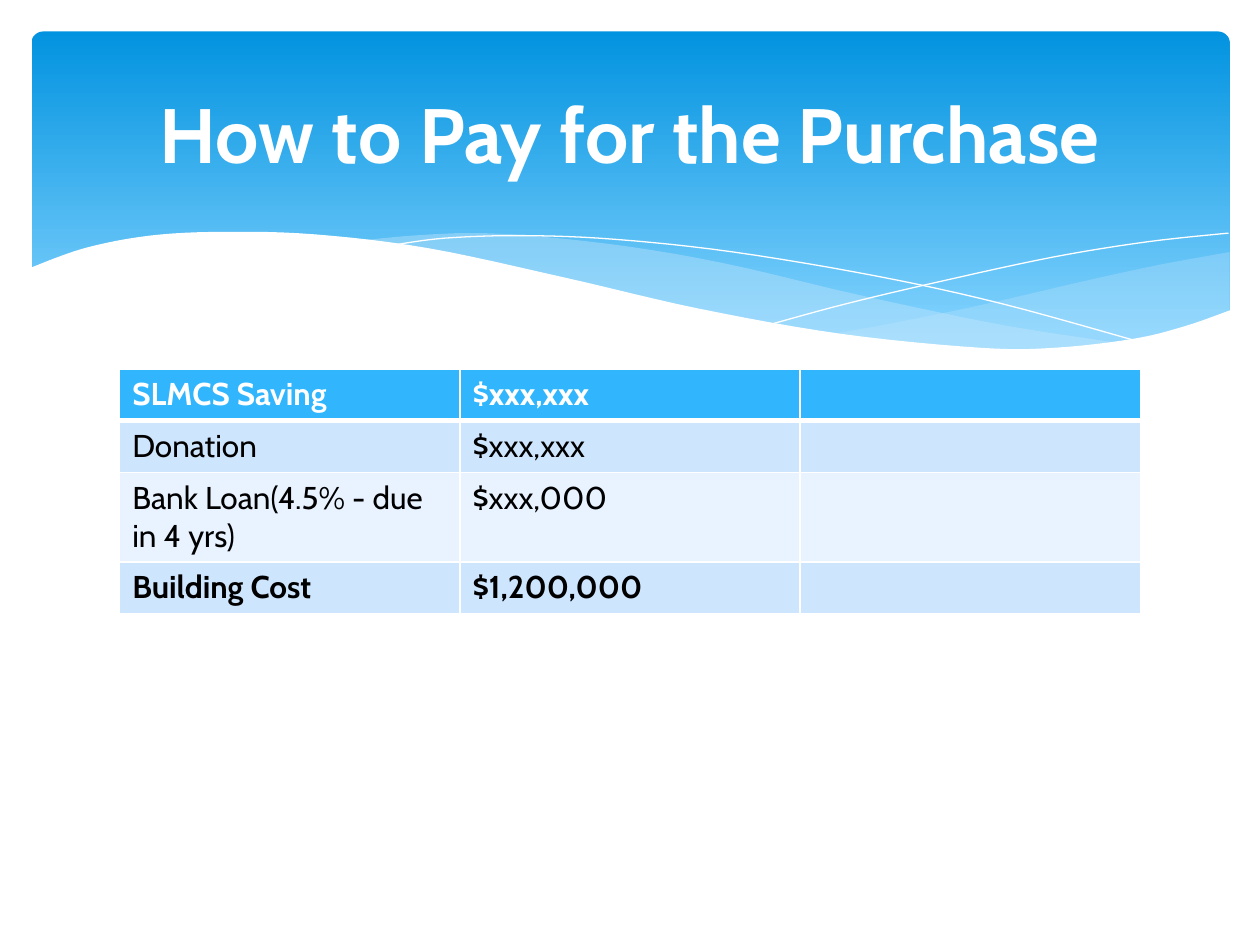
from lxml import etree
from pptx import Presentation
from pptx import util as u
from pptx.dml.color import RGBColor
from pptx.enum import shapes, text
from pptx.oxml import ns

PX = 9144  # 100 px to the inch
FONT = "Cabin"
WHITE, BLACK, PALE = "FFFFFF", "000000", "C6E7FC"

# Edges of each wave, relative to the banner's corner
RIGHT = [
    [(951, 175), (896, 185), (836, 198), (754, 217), (681, 232), (636, 240)],
    [(636, 240), (680, 246), (732, 251), (789, 253), (838, 250), (880, 244),
     (917, 234), (951, 222)],
]
LEFT = [
    [(261, 166), (303, 162), (355, 160), (417, 164), (489, 173), (559, 186),
     (643, 206), (716, 222), (782, 235), (868, 248)],
    [(868, 248), (832, 252), (793, 253), (736, 252), (670, 245), (593, 233),
     (505, 215), (424, 197), (358, 182), (298, 171), (261, 166)],
]
FRONT = [
    [(-2, 188), (42, 172), (94, 162), (152, 159), (225, 161), (315, 172),
     (422, 195), (530, 220), (643, 240), (753, 251), (812, 251), (874, 244),
     (915, 234), (952, 221)],
    [(952, 304), (-2, 304)],
]
LINES = [
    [(284, 170), (328, 164), (391, 162), (464, 165), (557, 175), (670, 194),
     (770, 216), (882, 247)],
    [(588, 232), (647, 216), (723, 198), (811, 179), (885, 167), (950, 160)],
]
ROWS = [
    ("SLMCS Saving", "$xxx,xxx", ""),
    ("Donation", "$xxx,xxx", ""),
    ("Bank Loan(4.5% - due in 4 yrs)", "$xxx,000", ""),
    ("Building Cost", "$1,200,000", ""),
]
# Fill, text colour and bold of each row
STYLES = [("31B6FD", WHITE, True), ("CEE5FE", BLACK, False),
          ("E8F3FF", BLACK, False), ("CEE5FE", BLACK, True)]


def px(*nums):
    return [u.Emu(round(n * PX)) for n in nums]


def paint(fill, color):
    fill.solid()
    fill.fore_color.rgb = RGBColor.from_string(color)


def style(para, size, color, bold):
    font = para.font
    font.name, font.size, font.bold = FONT, u.Pt(size), bold
    font.color.rgb = RGBColor.from_string(color)


def smooth(knots, steps=6):
    """Points of a Catmull-Rom curve through the knots."""
    ends = [knots[0], *knots, knots[-1]]
    points = [knots[0]]
    for a, b, c, d in zip(ends, ends[1:], ends[2:], ends[3:]):
        for i in range(1, steps + 1):
            t = i / steps
            points.append(tuple(
                (2 * q + (r - p) * t + (2 * p - 5 * q + 4 * r - s) * t ** 2
                 + (3 * q - p - 3 * r + s) * t ** 3) / 2
                for p, q, r, s in zip(a, b, c, d)))
    return points


def trace(slide, x, y, edges, close):
    points = [px(x + a, y + b) for edge in edges for a, b in smooth(edge)]
    pen = slide.shapes.build_freeform(*points[0])
    pen.add_line_segments(points[1:], close=close)
    shape = pen.convert_to_shape()
    shape.shadow.inherit = False
    return shape


def wave(slide, x, y, edges, color, alpha=100):
    shape = trace(slide, x, y, edges, True)
    paint(shape.fill, color)
    shape.line.fill.background()
    if alpha < 100:
        tone = shape.fill._xPr.find(".//" + ns.qn("a:srgbClr"))
        etree.SubElement(tone, ns.qn("a:alpha"), val=str(alpha * 1000))


def banner(slide, x, y, w, h):
    panel = slide.shapes.add_shape(
        shapes.MSO_SHAPE.ROUNDED_RECTANGLE, *px(x, y, w, h))
    panel.adjustments[0] = 0.034
    panel.shadow.inherit = False
    panel.line.fill.background()
    panel.fill.gradient()
    panel.fill.gradient_angle = 270
    stops = [("0293E0", 0), ("83D3FE", 0.9)]
    for stop, (color, place) in zip(panel.fill.gradient_stops, stops):
        stop.color.rgb = RGBColor.from_string(color)
        stop.position = place

    wave(slide, x, y, RIGHT, PALE, 29)
    wave(slide, x, y, LEFT, PALE, 40)
    for knots in LINES:
        line = trace(slide, x, y, [knots], False)
        line.fill.background()
        paint(line.line.fill, WHITE)
        line.line.width = u.Pt(0)
    wave(slide, x, y, FRONT, WHITE)


def title(slide, x, y, w, h, words):
    frame = slide.shapes.add_textbox(*px(x, y, w, h)).text_frame
    frame.word_wrap = True
    frame.vertical_anchor = text.MSO_ANCHOR.MIDDLE
    para = frame.paragraphs[0]
    para.text = words
    para.alignment = text.PP_ALIGN.CENTER
    style(para, 44, WHITE, True)


def border(cell, widths):
    """Draw white sides, with widths in points by side letter."""
    props = cell._tc.get_or_add_tcPr()
    for i, (side, width) in enumerate(widths.items()):
        line = etree.Element(ns.qn("a:ln" + side), w=str(u.Pt(width)))
        fill = etree.SubElement(line, ns.qn("a:solidFill"))
        etree.SubElement(fill, ns.qn("a:srgbClr"), val=WHITE)
        props.insert(i, line)


def costs(slide, x, y, w, h):
    table = slide.shapes.add_table(
        len(ROWS), len(ROWS[0]), *px(x, y, w, h)).table
    for r, (row, (fill, color, bold)) in enumerate(zip(ROWS, STYLES)):
        top, bottom = (3 if r == 1 else 1), (3 if r == 0 else 1)
        for c, words in enumerate(row):
            cell = table.cell(r, c)
            cell.text = words
            style(cell.text_frame.paragraphs[0], 18, color, bold)
            paint(cell.fill, fill)
            border(cell, {"L": 1, "R": 1, "T": top, "B": bottom})


def main():
    deck = Presentation()
    deck.slide_width, deck.slide_height = px(1000, 750)
    slide = deck.slides.add_slide(deck.slide_layouts[6])
    banner(slide, 25, 25, 951, 270)
    costs(slide, 95, 293, 810, 164)
    title(slide, 50, 37, 900, 137, "How to Pay for the Purchase")
    deck.save("out.pptx")


if __name__ == "__main__":
    main()
